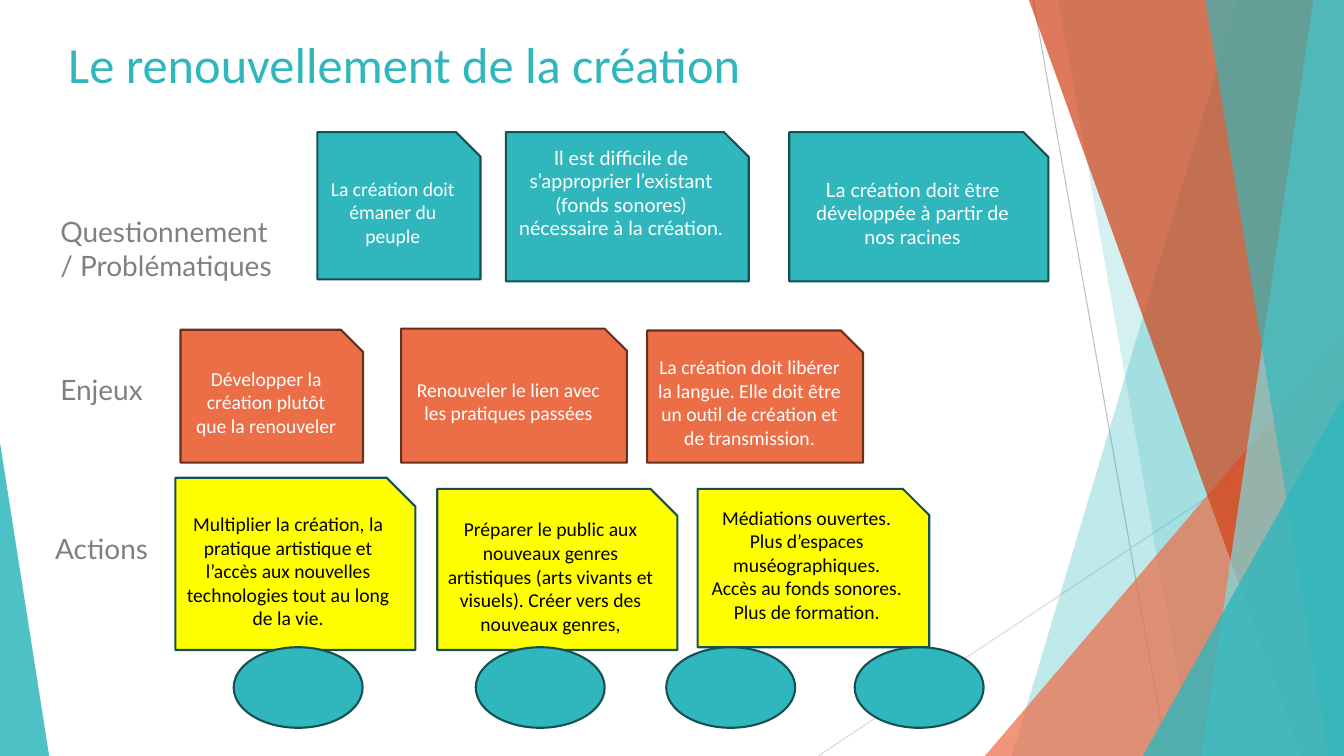
"""Build the slide on renewing creation: questions, stakes and actions."""
from dataclasses import dataclass

import lxml.etree
import pptx
import pptx.dml.color
import pptx.enum.shapes
import pptx.enum.text
import pptx.oxml.ns
import pptx.shapes.base
import pptx.slide
import pptx.text.text
import pptx.util

Cm = pptx.util.Cm
MSO_SHAPE = pptx.enum.shapes.MSO_SHAPE
ANCHOR = pptx.enum.text.MSO_ANCHOR
ALIGN = pptx.enum.text.PP_ALIGN
WIDTH, HEIGHT = 33.87, 19.05


@dataclass(frozen=True)
class Theme:
    """Colours, fonts and type sizes."""
    teal: str = "30B7BD"
    pale_teal: str = "7CDADE"
    dark_teal: str = "155053"
    orange: str = "EC6E47"
    rust: str = "D14216"
    brown: str = "67301F"
    yellow: str = "FFFF00"
    white: str = "FFFFFF"
    black: str = "000000"
    grey: str = "808080"
    hairline: str = "BFBFBF"
    pale_hairline: str = "D9D9D9"
    calibri: str = "Calibri"
    lato: str = "Lato"
    title_size: float = 36
    label_size: float = 20
    card_size: float = 14
    outline: float = 1.5
    hairline_width: float = 0.75


THEME = Theme()


@dataclass(frozen=True)
class Box:
    """A rectangle in centimetres."""
    left: float
    top: float
    width: float
    height: float


@dataclass(frozen=True)
class Ray:
    """A decorative line."""
    start: tuple[float, float]
    end: tuple[float, float]
    color: str


@dataclass(frozen=True)
class Band:
    """A full-height panel from a slanted left side to the right slide edge."""
    top_left: float
    bottom_left: float
    color: str
    opacity: int


@dataclass(frozen=True)
class Wedge:
    """A right-angled triangle with its peak at one end of its base."""
    box: Box
    peak: float
    color: str
    opacity: int


@dataclass(frozen=True)
class Label:
    """A line of free-standing text."""
    text: str
    box: Box
    font: str
    size: float
    color: str
    anchor: ANCHOR = ANCHOR.TOP


@dataclass(frozen=True)
class Card:
    """A cut-corner card; the lift raises its text."""
    text: str
    box: Box
    font: str = THEME.calibri
    lift: float = 0


@dataclass(frozen=True)
class CardRow:
    """Cards sharing one colour scheme."""
    fill: str
    line: str
    ink: str
    cards: tuple[Card, ...]


RAYS = (
    Ray((26.04, 0), (29.41, HEIGHT), THEME.hairline),
    Ray((WIDTH, 10.24), (20.62, HEIGHT), THEME.pale_hairline),
)
DECOR = (
    Band(31.19, 25.5, THEME.teal, 30),
    Band(26.67, 30.05, THEME.teal, 20),
    Wedge(Box(24.82, 8.46, 9.05, 10.59), 1, THEME.orange, 72),
    Band(25.93, 32.79, THEME.rust, 70),
    Band(33.1, 30.28, THEME.pale_teal, 70),
    Band(30.38, 33.48, THEME.teal, 65),
    Wedge(Box(28.8, 9.98, 5.07, 9.07), 1, THEME.teal, 80),
    Wedge(Box(0, 11.15, 1.24, 7.9), 0, THEME.teal, 85),
)
LABELS = (
    Label("Le renouvellement de la création", Box(1.47, 0.71, 23.88, 1.78),
          THEME.calibri, THEME.title_size, THEME.teal, ANCHOR.BOTTOM),
    *(Label(text, Box(left, top, 6.12, 2.39), THEME.lato, THEME.label_size, THEME.grey)
      for text, left, top in (("Questionnement / Problématiques", 1.27, 5.28),
                              ("Enjeux", 1.27, 9.27), ("Actions", 1.14, 13.26))),
)
ROWS = (
    CardRow(THEME.teal, THEME.dark_teal, THEME.white, (
        Card("La création doit émaner du peuple", Box(8, 3.33, 4.11, 3.71)),
        Card("Il est difficile de s’approprier l’existant (fonds sonores) "
             "nécessaire à la création.", Box(12.75, 3.33, 6.12, 3.76), THEME.lato, 1.02),
        Card("La création doit être développée à partir de nos racines",
             Box(19.89, 3.33, 6.53, 3.76), THEME.lato))),
    CardRow(THEME.orange, THEME.brown, THEME.white, (
        Card("Développer la création plutôt que la renouveler", Box(4.55, 8.31, 4.6, 3.35)),
        Card("Renouveler le lien avec les pratiques passées", Box(10.11, 8.28, 5.69, 3.38)),
        Card("La création doit libérer la langue. Elle doit être un outil de création "
             "et de transmission.", Box(16.31, 8.33, 5.44, 3.33)))),
    CardRow(THEME.yellow, THEME.dark_teal, THEME.black, (
        Card("Multiplier la création, la pratique artistique et l’accès aux nouvelles "
             "technologies tout au long de la vie.", Box(4.42, 12.04, 6.05, 4.34)),
        Card("Préparer le public aux nouveaux genres artistiques (arts vivants et visuels). "
             "Créer vers des nouveaux genres,", Box(11.02, 12.32, 6.05, 4.06)),
        Card("Médiations ouvertes.\nPlus d’espaces muséographiques.\n"
             "Accès au fonds sonores. Plus de formation.",
             Box(17.58, 12.32, 5.84, 3.99), lift=0.51))),
)
OVALS = tuple(Box(left, 16.31, 3.25, 2.03) for left in (5.89, 11.99, 16.79, 21.54))


def rgb(color: str) -> pptx.dml.color.RGBColor:
    """Turn a hex string into a colour."""
    return pptx.dml.color.RGBColor.from_string(color)


def lengths(box: Box) -> tuple[Cm, Cm, Cm, Cm]:
    """Give the box as slide lengths."""
    return Cm(box.left), Cm(box.top), Cm(box.width), Cm(box.height)


def add_ray(slide: pptx.slide.Slide, ray: Ray) -> None:
    """Draw a thin line without shadow."""
    line = slide.shapes.add_connector(pptx.enum.shapes.MSO_CONNECTOR.STRAIGHT,
                                      *map(Cm, ray.start + ray.end))
    line.line.color.rgb = rgb(ray.color)
    line.line.width = pptx.util.Pt(THEME.hairline_width)
    lxml.etree.SubElement(line._element.spPr, pptx.oxml.ns.qn("a:effectLst"))


def add_decor(slide: pptx.slide.Slide, decor: Band | Wedge) -> None:
    """Draw a translucent band or wedge."""
    if isinstance(decor, Band):
        builder = slide.shapes.build_freeform(Cm(decor.top_left), 0)
        corners = ((WIDTH, 0), (WIDTH, HEIGHT), (decor.bottom_left, HEIGHT))
        builder.add_line_segments([(Cm(x), Cm(y)) for x, y in corners], close=True)
        shape = builder.convert_to_shape()
    else:
        shape = slide.shapes.add_shape(MSO_SHAPE.ISOSCELES_TRIANGLE, *lengths(decor.box))
        shape.adjustments[0] = decor.peak
    shape.shadow.inherit = False
    shape.line.fill.background()
    shape.fill.solid()
    shape.fill.fore_color.rgb = rgb(decor.color)
    color = shape._element.spPr.find(".//" + pptx.oxml.ns.qn("a:srgbClr"))
    alpha = lxml.etree.SubElement(color, pptx.oxml.ns.qn("a:alpha"))
    alpha.set("val", str(decor.opacity * 1000))


def write(frame: pptx.text.text.TextFrame, text: str, font: str, size: float, color: str,
          anchor: ANCHOR, align: ALIGN) -> None:
    """Fill a text frame with uniformly styled paragraphs."""
    frame.text = text
    frame.word_wrap = True
    frame.vertical_anchor = anchor
    for paragraph in frame.paragraphs:
        paragraph.alignment = align
        paragraph.font.name = font
        paragraph.font.size = pptx.util.Pt(size)
        paragraph.font.color.rgb = rgb(color)


def add_label(slide: pptx.slide.Slide, label: Label) -> None:
    """Place a title or row label."""
    textbox = slide.shapes.add_textbox(*lengths(label.box))
    write(textbox.text_frame, label.text, label.font, label.size, label.color,
          label.anchor, ALIGN.LEFT)


def add_outlined(slide: pptx.slide.Slide, kind: MSO_SHAPE, box: Box, fill: str,
                 line: str) -> pptx.shapes.base.BaseShape:
    """Draw a filled preset shape with an outline."""
    shape = slide.shapes.add_shape(kind, *lengths(box))
    shape.shadow.inherit = False
    shape.fill.solid()
    shape.fill.fore_color.rgb = rgb(fill)
    shape.line.color.rgb = rgb(line)
    shape.line.width = pptx.util.Pt(THEME.outline)
    return shape


def add_row(slide: pptx.slide.Slide, row: CardRow) -> None:
    """Draw the cards of one row."""
    for card in row.cards:
        shape = add_outlined(slide, MSO_SHAPE.SNIP_1_RECTANGLE, card.box, row.fill, row.line)
        frame = shape.text_frame
        frame.margin_bottom += Cm(card.lift)
        write(frame, card.text, card.font, THEME.card_size, row.ink,
              ANCHOR.MIDDLE, ALIGN.CENTER)


def main() -> None:
    """Assemble and save the presentation."""
    presentation = pptx.Presentation()
    presentation.slide_width, presentation.slide_height = Cm(WIDTH), Cm(HEIGHT)
    slide = presentation.slides.add_slide(presentation.slide_layouts[6])
    for items, draw in ((RAYS, add_ray), (DECOR, add_decor),
                        (LABELS, add_label), (ROWS, add_row)):
        for item in items:
            draw(slide, item)
    for oval in OVALS:
        add_outlined(slide, MSO_SHAPE.OVAL, oval, THEME.teal, THEME.dark_teal)
    presentation.save("out.pptx")


if __name__ == "__main__":
    main()
